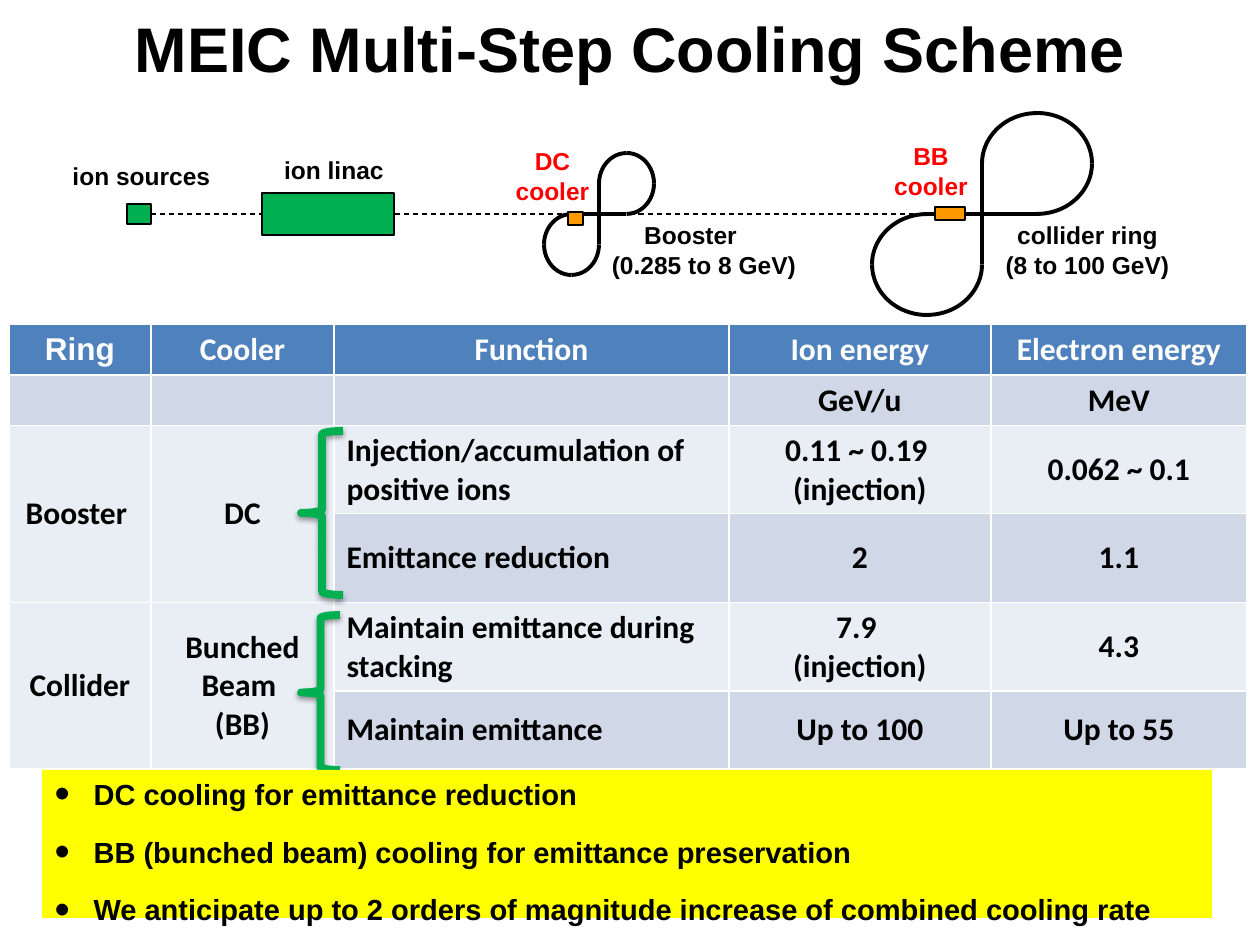
from dataclasses import dataclass

from lxml.etree import SubElement
from pptx import Presentation
from pptx.dml.color import RGBColor
from pptx.enum.dml import MSO_LINE
from pptx.enum.shapes import MSO_CONNECTOR, MSO_SHAPE
from pptx.enum.text import MSO_ANCHOR, MSO_AUTO_SIZE, PP_ALIGN
from pptx.oxml.ns import qn
from pptx.util import Pt


@dataclass(frozen=True)
class Theme:
    """Colours, fonts and sizes of the slide."""
    black: str = "000000"
    white: str = "FFFFFF"
    green: str = "00B050"
    orange: str = "FF9900"
    red: str = "FF0000"
    yellow: str = "FFFF00"
    header: str = "4F81BD"
    bands: tuple = ("E9EDF4", "D0D8E8")
    font: str = "Arial"
    table_font: str = "Calibri"
    title_size: float = 36
    label_size: float = 14
    table_size: float = 18
    list_size: float = 16.6
    thin: float = 0.75
    ring: float = 2.25
    brace: float = 4.5


THEME = Theme()
SCALE = 914400 / 126
COLUMNS = (142, 183, 395, 262, 256)
ROWS = (51, 50, 88, 89, 88, 78)
CELLS = (
    ("Ring", "Cooler", "Function", "Ion energy", "Electron energy"),
    ("", "", "", "GeV/u", "MeV"),
    ("Booster ", "DC", "Injection/accumulation of positive ions",
     "0.11 ~ 0.19 \n(injection)", "0.062 ~ 0.1"),
    (None, None, "Emittance reduction", "2", "1.1"),
    ("Collider", "Bunched Beam \n(BB)", "Maintain emittance during stacking",
     "7.9 \n(injection)", "4.3"),
    (None, None, "Maintain emittance", "Up to 100", "Up to 55"),
)
POINTS = (
    "DC cooling for emittance reduction",
    "BB (bunched beam) cooling for emittance preservation",
    "We anticipate up to 2 orders of magnitude increase of combined cooling rate",
)


def px(*lengths):
    """Turn pixel lengths into a list of EMU."""
    return [round(length * SCALE) for length in lengths]


def rgb(value):
    """Return a colour object for a hex value."""
    return RGBColor.from_string(value)


def place(shape, box):
    """Move and size a shape to a pixel box."""
    shape.left, shape.top, shape.width, shape.height = px(*box)


def write(frame, lines, size, color=THEME.black, font=THEME.font, align=PP_ALIGN.CENTER):
    """Write bold lines into a text frame, one paragraph each."""
    for index, line in enumerate(lines):
        paragraph = frame.add_paragraph() if index else frame.paragraphs[0]
        paragraph.alignment = align
        run = paragraph.add_run()
        run.text = line
        run.font.size, run.font.bold, run.font.name = Pt(size), True, font
        run.font.color.rgb = rgb(color)


def add_outline(shapes, kind, box, color, width, fill=None):
    """Add a preset shape with a line and an optional fill."""
    shape = shapes.add_shape(kind, *px(*box))
    shape.shadow.inherit = False
    shape.line.color.rgb, shape.line.width = rgb(color), Pt(width)
    if fill:
        shape.fill.solid()
        shape.fill.fore_color.rgb = rgb(fill)
    else:
        shape.fill.background()
    return shape


def add_block(shapes, box, fill):
    """Add a filled machine part."""
    return add_outline(shapes, MSO_SHAPE.RECTANGLE, box, THEME.black, THEME.thin, fill)


def add_line(shapes, ends, width):
    """Add a straight black connector."""
    line = shapes.add_connector(MSO_CONNECTOR.STRAIGHT, *px(*ends))
    line.line.color.rgb, line.line.width = rgb(THEME.black), Pt(width)
    SubElement(line._element.spPr, qn("a:effectLst"))
    return line


def add_label(shapes, box, lines, color=THEME.black):
    """Add a wrapped, centred label."""
    frame = shapes.add_textbox(*px(*box)).text_frame
    frame.word_wrap = True
    write(frame, lines, THEME.label_size, color)
    return frame


def add_figure_eight(shapes, x, y, width, height):
    """Draw a figure-eight ring that crosses itself at x, y."""
    add_line(shapes, (x, y - height / 2, x, y + height / 2), THEME.ring)
    add_line(shapes, (x + width / 2, y, x - width / 2, y), THEME.ring)
    for side, rotations in ((1, (0, 270, 90)), (-1, (180, 90, 270))):
        center_x, center_y = x + side * width / 2, y - side * height / 2
        for rotation in rotations:
            wide, high = (width, height) if rotation % 180 == 0 else (height, width)
            box = (center_x - wide / 2, center_y - high / 2, wide, high)
            add_outline(shapes, MSO_SHAPE.ARC, box, THEME.black, THEME.ring).rotation = rotation


def add_beamline(slide, left, top):
    """Draw the ion complex from sources to collider ring."""
    shapes = slide.shapes.add_group_shape().shapes
    axis = top + 102
    source = add_block(shapes, (left + 75, axis - 10, 24, 20), THEME.green)
    beam = add_line(shapes, (left + 99, axis, left + 897, axis), THEME.thin)
    beam.begin_connect(source, 3)
    beam.line.dash_style = MSO_LINE.DASH
    add_block(shapes, (left + 210, axis - 21, 132, 42), THEME.green)
    add_figure_eight(shapes, left + 547, axis, 55, 61)
    add_figure_eight(shapes, left + 930, axis, 110, 101)
    add_label(shapes, (left, top + 43, 179, 43), ["ion sources"])
    add_label(shapes, (left + 182, top + 37, 200, 40), ["ion linac"])
    booster = add_label(shapes, (left + 516, top + 102, 252, 69), ["Booster ", "(0.285 to 8 GeV)"])
    booster.paragraphs[1]._p.get_or_add_pPr().set("marL", str(px(20)[0]))
    add_label(shapes, (left + 922, top + 102, 227, 72), ["collider ring", "(8 to 100 GeV)"])
    add_block(shapes, (left + 516, top + 100, 15, 13), THEME.orange)
    add_block(shapes, (left + 883, top + 95, 30, 13), THEME.orange)
    add_label(shapes, (left + 814, top + 23, 130, 69), ["BB cooler"], THEME.red)
    add_label(shapes, (left + 433, top + 28, 135, 69), ["DC cooler"], THEME.red)


def add_cooling_table(slide, left, top):
    """Add the table of coolers, functions and energies."""
    box = px(left, top, sum(COLUMNS), sum(ROWS))
    table = slide.shapes.add_table(len(ROWS), len(COLUMNS), *box).table
    for column, width in zip(table.columns, px(*COLUMNS)):
        column.width = width
    for row, height in zip(table.rows, px(*ROWS)):
        row.height = height
    for row, texts in enumerate(CELLS):
        for column, text in enumerate(texts):
            cell = table.cell(row, column)
            cell.fill.solid()
            cell.fill.fore_color.rgb = rgb(THEME.bands[row % 2] if row else THEME.header)
            cell.vertical_anchor = MSO_ANCHOR.MIDDLE
            if text is None:
                table.cell(row - 1, column).merge(cell)
            elif text:
                align = PP_ALIGN.LEFT if row > 1 and column == 2 else PP_ALIGN.CENTER
                write(cell.text_frame, text.split("\n"), THEME.table_size,
                      THEME.black if row else THEME.white,
                      THEME.font if text == "Ring" else THEME.table_font, align)


def add_brace(slide, box):
    """Add a green brace with a soft shadow below it."""
    brace = add_outline(slide.shapes, MSO_SHAPE.LEFT_BRACE, box, THEME.green, THEME.brace)
    effects = brace._element.spPr.find(qn("a:effectLst"))
    shadow = SubElement(effects, qn("a:outerShdw"), blurRad="40000", dist="20000",
                        dir="5400000", rotWithShape="0")
    color = SubElement(shadow, qn("a:srgbClr"), val=THEME.black)
    SubElement(color, qn("a:alpha"), val="38000")


def fill_summary(body, box):
    """Turn the body placeholder into the yellow bullet list."""
    place(body, box)
    body._element.getparent().append(body._element)
    body.fill.solid()
    body.fill.fore_color.rgb = rgb(THEME.yellow)
    frame = body.text_frame
    frame.auto_size = MSO_AUTO_SIZE.NONE
    write(frame, POINTS, THEME.list_size, align=PP_ALIGN.LEFT)
    indent = px(39)[0]
    for paragraph in frame.paragraphs:
        paragraph.space_before, paragraph.space_after = Pt(0), Pt(13)
        properties = paragraph._p.get_or_add_pPr()
        properties.set("marL", str(indent))
        properties.set("indent", str(-indent))
        SubElement(properties, qn("a:buSzPct"), val="150000")
        SubElement(properties, qn("a:buFont"), typeface=THEME.font)
        SubElement(properties, qn("a:buChar"), char="•")


def main():
    """Build and save the presentation."""
    presentation = Presentation()
    presentation.slide_width, presentation.slide_height = px(1260, 945)
    slide = presentation.slides.add_slide(presentation.slide_layouts[1])
    title, body = slide.placeholders
    place(title, (0, 0, 1260, 95))
    write(title.text_frame, ["MEIC Multi-Step Cooling Scheme"], THEME.title_size)
    add_beamline(slide, 52, 112)
    add_cooling_table(slide, 9, 324)
    add_brace(slide, (301, 615, 39, 155))
    add_brace(slide, (301, 431, 42, 164))
    fill_summary(body, (42, 770, 1170, 148))
    presentation.save("out.pptx")


if __name__ == "__main__":
    main()
